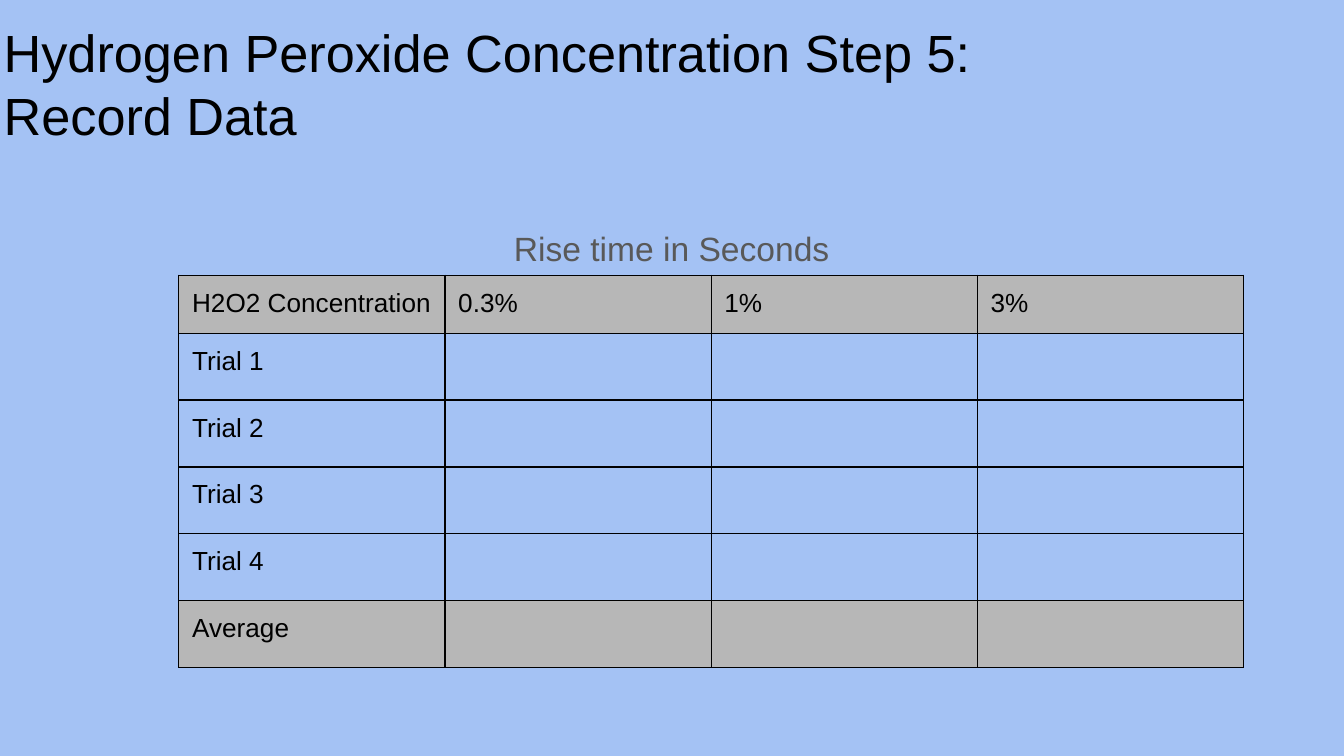
from lxml import etree
from pptx import Presentation
from pptx.dml.color import RGBColor
from pptx.enum.text import MSO_ANCHOR, PP_ALIGN
from pptx.oxml.ns import qn
from pptx.util import Cm, Pt

TOP = MSO_ANCHOR.TOP
LEFT = PP_ALIGN.LEFT
CENTER = PP_ALIGN.CENTER
INK = "000000"
GREY = "B7B7B7"
PAD = Cm(0.25)


def paint(part, color):
    part.solid()
    part.fore_color.rgb = RGBColor.from_string(color)


def style(frame, size, color, align):
    for para in frame.paragraphs:
        para.alignment = align
        for run in para.runs:
            run.font.name = "Arial"
            run.font.size = Pt(size)
            paint(run.font.fill, color)


deck = Presentation()
deck.slide_width, deck.slide_height = Cm(25.4), Cm(14.28)
slide = deck.slides.add_slide(deck.slide_layouts[5])
paint(slide.background.fill, "A4C2F4")

title = slide.shapes.title
title.left, title.top = Cm(-0.18), Cm(0.13)
title.width, title.height = Cm(24.71), Cm(2.69)
frame = title.text_frame
frame.text = "Hydrogen Peroxide Concentration Step 5:\nRecord Data"
frame.vertical_anchor = TOP
frame.margin_left = frame.margin_right = PAD
frame.margin_top = frame.margin_bottom = PAD
style(frame, 28, INK, LEFT)

label = slide.shapes.add_textbox(Cm(0.86), Cm(2.54), Cm(23.67), Cm(11.07))
frame = label.text_frame
frame.word_wrap = True
frame.margin_top = Cm(1.65)
frame.text = "Rise time in Seconds"
frame.paragraphs[0].line_spacing = 1.15
style(frame, 18, "595959", CENTER)

rows = [
    ["H2O2 Concentration", "0.3%", "1%", "3%"],
    *[[f"Trial {n}", "", "", ""] for n in range(1, 5)],
    ["Average", "", "", ""],
]
tall = [1.06] + [1.22] * 5
wide = 5.03
table = slide.shapes.add_table(
    len(rows), 4, Cm(3.38), Cm(5.2), Cm(4 * wide), Cm(sum(tall))
).table
table.first_row = table.horz_banding = False
for col in table.columns:
    col.width = Cm(wide)
for r, words in enumerate(rows):
    table.rows[r].height = Cm(tall[r])
    for c, word in enumerate(words):
        cell = table.cell(r, c)
        cell.text = word
        cell.margin_left = cell.margin_right = PAD
        cell.margin_top = cell.margin_bottom = PAD
        style(cell.text_frame, 14, INK, LEFT)
        props = cell._tc.get_or_add_tcPr()
        for side in ("lnL", "lnR", "lnT", "lnB"):
            line = etree.SubElement(props, qn(f"a:{side}"), w=str(Pt(0.75)))
            fill = etree.SubElement(line, qn("a:solidFill"))
            etree.SubElement(fill, qn("a:srgbClr"), val=INK)
        if r in (0, len(rows) - 1):
            paint(cell.fill, GREY)
        else:
            cell.fill.background()

deck.save("out.pptx")
